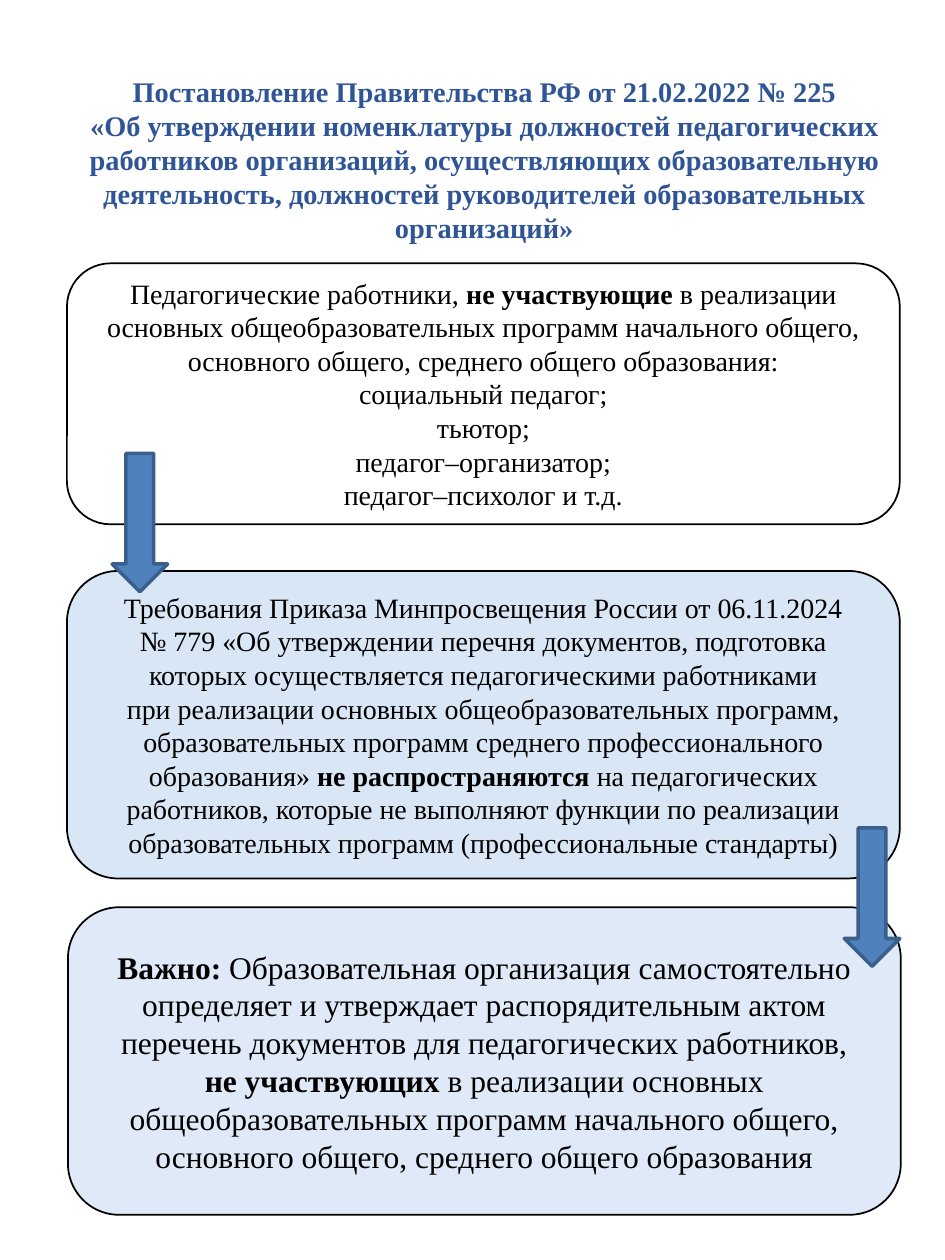
from lxml import etree
from pptx import Presentation
from pptx.dml.color import RGBColor
from pptx.enum.shapes import MSO_SHAPE
from pptx.enum.text import MSO_ANCHOR, PP_ALIGN
from pptx.oxml.ns import qn
from pptx.util import Cm, Pt

BLACK = RGBColor(0x00, 0x00, 0x00)
WHITE = RGBColor(0xFF, 0xFF, 0xFF)
TITLE_BLUE = RGBColor(0x2F, 0x55, 0x97)
PANEL_BLUE = RGBColor(0x55, 0x8E, 0xD5)
ARROW_BLUE = RGBColor(0x4F, 0x81, 0xBD)
ARROW_EDGE = RGBColor(0x3A, 0x5F, 0x8C)

FONT = "Times New Roman"
PANEL_WIDTH = 16.79

TITLE = (
    "Постановление Правительства РФ от 21.02.2022 № 225\v"
    "«Об утверждении номенклатуры должностей педагогических работников "
    "организаций, осуществляющих образовательную деятельность, должностей "
    "руководителей образовательных организаций»"
)
STAFF = (
    "Педагогические работники, **не участвующие** в реализации основных "
    "общеобразовательных программ начального общего, основного общего, "
    "среднего общего образования:\n"
    "социальный педагог;\nтьютор;\nпедагог–организатор;\nпедагог–психолог и т.д."
)
REQUIREMENTS = (
    "Требования Приказа Минпросвещения России от 06.11.2024\v"
    "№ 779 «Об утверждении перечня документов, подготовка которых "
    "осуществляется педагогическими работниками\v"
    "при реализации основных общеобразовательных программ, образовательных "
    "программ среднего профессионального образования» **не распространяются** "
    "на педагогических работников, которые не выполняют функции по реализации "
    "образовательных программ (профессиональные стандарты)"
)
IMPORTANT = (
    "**Важно:** Образовательная организация самостоятельно определяет и "
    "утверждает распорядительным актом перечень документов для педагогических "
    "работников,\v**не участвующих** в реализации основных общеобразовательных "
    "программ начального общего, основного общего, среднего общего образования"
)


def write(sp, text, size=16, color=BLACK, bold=False):
    """Fill a shape with centred text: ** toggles bold, \\v breaks a line."""
    tf = sp.text_frame
    tf.word_wrap = True
    tf.vertical_anchor = MSO_ANCHOR.MIDDLE
    for i, line in enumerate(text.split("\n")):
        p = tf.add_paragraph() if i else tf.paragraphs[0]
        p.alignment = PP_ALIGN.CENTER
        p.line_spacing = Pt(size * 1.2)
        for j, part in enumerate(line.split("**")):
            for n, piece in enumerate(part.split("\v")):
                if n:
                    p.add_line_break()
                if piece:
                    r = p.add_run()
                    r.text = piece
                    r.font.name = FONT
                    r.font.size = Pt(size)
                    r.font.bold = bold or j % 2 == 1
                    r.font.color.rgb = color


def add_title(slide, text):
    """Add the heading."""
    sp = slide.shapes.add_textbox(Cm(0.97), Cm(1.08), Cm(17.58), Cm(4.24))
    write(sp, text, size=16.2, color=TITLE_BLUE, bold=True)


def add_block(slide, kind, left, top, width, height, fill, line, weight):
    """Add a filled and outlined preset shape, measured in centimetres."""
    sp = slide.shapes.add_shape(kind, Cm(left), Cm(top), Cm(width), Cm(height))
    sp.shadow.inherit = False
    sp.fill.solid()
    sp.fill.fore_color.rgb = fill
    sp.line.color.rgb = line
    sp.line.width = Pt(weight)
    return sp


def add_panel(slide, left, top, height, text, size=16, fill=PANEL_BLUE, opacity=100):
    """Add a rounded text panel with the given fill opacity in percent."""
    sp = add_block(slide, MSO_SHAPE.ROUNDED_RECTANGLE, left, top, PANEL_WIDTH,
                   height, fill, BLACK, 1)
    if opacity < 100:
        clr = sp.fill._xPr.find(qn("a:solidFill"))[0]
        etree.SubElement(clr, qn("a:alpha"), val=str(opacity * 1000))
    write(sp, text, size=size)


def add_arrow(slide, left, top):
    """Add a down arrow between two panels."""
    add_block(slide, MSO_SHAPE.DOWN_ARROW, left, top, 1.12, 2.79,
              ARROW_BLUE, ARROW_EDGE, 2)


def main():
    """Build the slide and save it."""
    prs = Presentation()
    prs.slide_width, prs.slide_height = Cm(19.05), Cm(25.4)
    slide = prs.slides.add_slide(prs.slide_layouts[6])
    add_title(slide, TITLE)
    add_panel(slide, 1.35, 5.31, 5.26, STAFF, fill=WHITE)
    add_panel(slide, 1.35, 11.51, 6.2, REQUIREMENTS, opacity=22)
    add_arrow(slide, 2.26, 9.14)
    add_panel(slide, 1.37, 18.29, 6.2, IMPORTANT, size=18, opacity=19)
    add_arrow(slide, 17.02, 16.69)
    prs.save("out.pptx")


if __name__ == "__main__":
    main()
